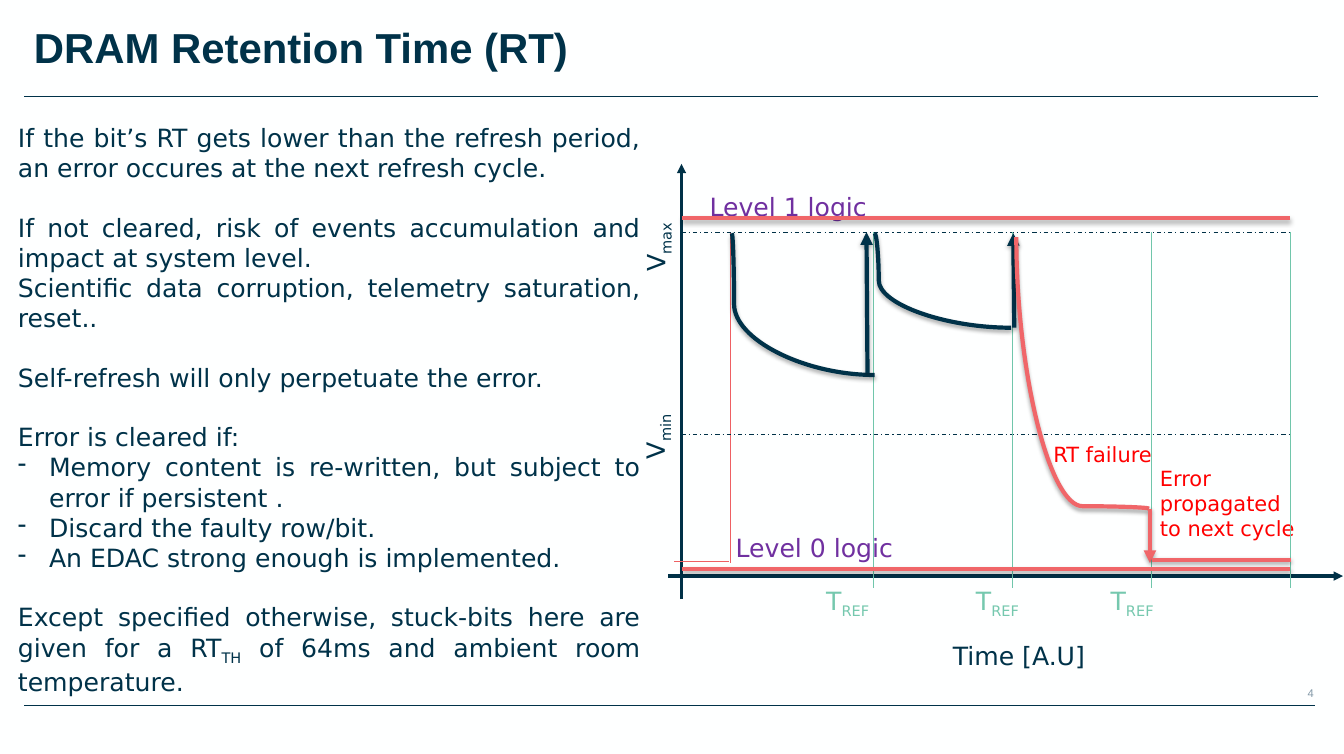
"""Build the slide on DRAM retention time with its voltage-over-time diagram."""

from dataclasses import dataclass

import lxml.etree
import pptx
import pptx.dml.color
import pptx.enum.dml
import pptx.enum.shapes
import pptx.enum.text
import pptx.oxml.ns
import pptx.shapes.connector
import pptx.slide
import pptx.text.text
import pptx.util

RGBColor = pptx.dml.color.RGBColor
Align = pptx.enum.text.PP_ALIGN
Connector = pptx.enum.shapes.MSO_CONNECTOR

CELL = pptx.util.Inches(0.1)
COLUMNS, ROWS = 133.7, 75

PAPER = RGBColor(0xFE, 0xFF, 0xFF)
NAVY = RGBColor(0x00, 0x32, 0x49)
AXIS_NAVY = RGBColor(0x00, 0x31, 0x47)
CORAL = RGBColor(0xF0, 0x66, 0x69)
START_RED = RGBColor(0xEE, 0x60, 0x63)
GREEN = RGBColor(0x70, 0xC6, 0xAB)
LABEL_GREEN = RGBColor(0x75, 0xC8, 0xAE)
PURPLE = RGBColor(0x70, 0x30, 0xA0)
RED = RGBColor(0xFF, 0x00, 0x00)
GREY = RGBColor(0x81, 0x97, 0xA6)

BODY_FONT = "DejaVu Sans"
BODY_SIZE = 18
BLANK_LINE = 21
V_MAX, V_MIN = 23.1, 43.2
AXIS_COLUMN, END_COLUMN = 67.8, 128.4
FIRST_REFRESH, REFRESH_PERIOD = 86.9, 13.83


@dataclass(frozen=True)
class Label:
    """Text box in grid cells; every second part between bars is a subscript."""

    text: str
    column: float
    row: float
    columns: float
    rows: float = 4
    color: RGBColor = NAVY
    size: float = BODY_SIZE
    font: str = BODY_FONT
    bold: bool = False
    wrap: bool = False
    rotation: float = 0
    align: Align = Align.LEFT
    right_inset: float = 1


@dataclass(frozen=True)
class Stroke:
    """Connector between two grid points; a bend makes it a curve."""

    start: tuple[float, float]
    end: tuple[float, float]
    color: RGBColor = AXIS_NAVY
    width: float = 0.75
    dashed: bool = False
    arrow: bool = False
    shadow: bool = False
    bend: float | None = None
    rotation: int = 0


@dataclass(frozen=True)
class BodyLine:
    """Paragraph of the explanation."""

    text: str
    gap: bool = False
    bullet: bool = False


BODY = (
    BodyLine("If the bit’s RT gets lower than the refresh period, an error occures at the next refresh cycle."),
    BodyLine("If not cleared, risk of events accumulation and impact at system level.", gap=True),
    BodyLine("Scientific data corruption, telemetry saturation, reset.."),
    BodyLine("Self-refresh will only perpetuate the error.", gap=True),
    BodyLine("Error is cleared if:", gap=True),
    BodyLine("Memory content is re-written, but subject to error if persistent .", bullet=True),
    BodyLine("Discard the faulty row/bit.", bullet=True),
    BodyLine("An EDAC strong enough is implemented.", bullet=True),
    BodyLine(
        "Except specified otherwise, stuck-bits here are given for a RT|TH| of 64ms and ambient room temperature.",
        gap=True,
    ),
)

LABELS = (
    Label("DRAM Retention Time (RT)", 2.4, 1.7, 110.6, 6.2, size=30, font="Arial", bold=True, wrap=True),
    Label("4", 89.7, 67.8, 41, 2.4, GREY, 8, "Arial", wrap=True, align=Align.RIGHT, right_inset=0),
    Label("Time [A.U]", 93.8, 63.2, 18.5, wrap=True),
    Label("V|min", 60.8, 40.3, 8.7, wrap=True, rotation=270),
    Label("V|max", 60.4, 21.2, 9.6, wrap=True, rotation=270),
    Label("Level 1 logic", 69.6, 18.5, 17.8, color=PURPLE),
    Label("Level 0 logic", 72.2, 52.5, 17.8, color=PURPLE),
    Label("RT failure", 103.8, 43.4, 12.1, 3.5, RED, 15),
    Label("Error\npropagated\nto next cycle", 114.4, 45.8, 15.5, 8.6, RED, 15),
    *(Label("T|REF", column, 57.7, 6.8, color=LABEL_GREEN) for column in (81.2, 96.1, 109.5)),
)

STROKES = (
    Stroke((2.4, 70.2), (130.8, 70.2), NAVY),
    Stroke((2.4, 9.6), (131.1, 9.6), NAVY),
    Stroke((AXIS_COLUMN, 59.6), (AXIS_COLUMN, 16.3), width=2.25, arrow=True),
    Stroke((66.5, 57.3), (133.6, 57.3), width=2.25, arrow=True),
    Stroke((67.1, 55.9), (72.5, 55.9), START_RED),
    Stroke((72.7, 23.2), (72.7, 56), START_RED),
    *(Stroke((AXIS_COLUMN, row), (END_COLUMN, row), dashed=True) for row in (V_MIN, V_MAX)),
    *(
        Stroke((column, V_MAX), (column, 58.5), GREEN)
        for column in (FIRST_REFRESH + REFRESH_PERIOD * cycle for cycle in range(4))
    ),
    Stroke((72.8, 23.2), (87, 37.3), NAVY, 3, shadow=True, bend=0.016),
    Stroke((87, 23.2), (100.6, 32.6), NAVY, 3, shadow=True, bend=0.031),
    Stroke((86.3, 37.1), (86.2, V_MAX), NAVY, 3, arrow=True, shadow=True),
    Stroke((100.9, 32.6), (100.8, 23.2), NAVY, 3, arrow=True, shadow=True),
    Stroke((121.2, 30.5), (94.2, 43.7), CORAL, 3, shadow=True, bend=0.991, rotation=270),
    Stroke((114.4, 50.6), (114.4, 56), CORAL, 3, arrow=True, shadow=True),
    Stroke((114.6, 55.7), (END_COLUMN, 55.7), CORAL, 3, shadow=True),
    *(Stroke((AXIS_COLUMN, row), (128.3, row), CORAL, 3, shadow=True) for row in (21.7, 56.6)),
)


def cells(count: float) -> pptx.util.Emu:
    """Convert grid cells to a length."""
    return pptx.util.Emu(round(count * CELL))


def add_child(parent: lxml.etree._Element, tag: str, **attributes: str) -> lxml.etree._Element:
    """Append a drawing element with the given attributes."""
    return lxml.etree.SubElement(parent, pptx.oxml.ns.qn(tag), attributes)


def write_text(paragraph: pptx.text.text._Paragraph, text: str, label: Label) -> None:
    """Fill a paragraph with text, subscripts and the label's font."""
    for index, part in enumerate(text.split("|")):
        run = paragraph.add_run()
        run.text = part
        if index % 2:
            run._r.get_or_add_rPr().set("baseline", "-25000")
    paragraph.alignment = label.align
    paragraph.font.name = label.font
    paragraph.font.size = pptx.util.Pt(label.size)
    paragraph.font.bold = label.bold
    paragraph.font.color.rgb = label.color


def add_frame(slide: pptx.slide.Slide, label: Label) -> pptx.text.text.TextFrame:
    """Add an empty text box for the label."""
    shape = slide.shapes.add_textbox(*map(cells, (label.column, label.row, label.columns, label.rows)))
    shape.rotation = label.rotation
    frame = shape.text_frame
    frame.word_wrap = label.wrap
    frame.auto_size = pptx.enum.text.MSO_AUTO_SIZE.SHAPE_TO_FIT_TEXT
    frame.margin_right = cells(label.right_inset)
    return frame


def add_label(slide: pptx.slide.Slide, label: Label) -> None:
    """Add a label with one paragraph per line."""
    frame = add_frame(slide, label)
    for index, line in enumerate(label.text.split("\n")):
        write_text(frame.add_paragraph() if index else frame.paragraphs[0], line, label)


def add_body(slide: pptx.slide.Slide) -> None:
    """Add the justified explanation on the left."""
    label = Label("", 0.8, 11.7, 63.9, 58.6, wrap=True, align=Align.JUSTIFY)
    frame = add_frame(slide, label)
    for index, line in enumerate(BODY):
        paragraph = frame.add_paragraph() if index else frame.paragraphs[0]
        if line.gap:
            paragraph.space_before = pptx.util.Pt(BLANK_LINE)
        if line.bullet:
            properties = paragraph._p.get_or_add_pPr()
            properties.set("marL", str(cells(3.1)))
            properties.set("indent", str(cells(-3.1)))
            add_child(properties, "a:buChar", char="-")
        write_text(paragraph, line.text, label)


def add_stroke(slide: pptx.slide.Slide, stroke: Stroke) -> None:
    """Add a straight or curved connector."""
    kind = Connector.STRAIGHT if stroke.bend is None else Connector.CURVE
    connector = slide.shapes.add_connector(kind, *map(cells, stroke.start + stroke.end))
    connector.line.color.rgb = stroke.color
    connector.line.width = pptx.util.Pt(stroke.width)
    if stroke.dashed:
        connector.line.dash_style = pptx.enum.dml.MSO_LINE.DASH_DOT
    properties = connector._element.spPr
    if stroke.arrow:
        add_child(connector.line._get_or_add_ln(), "a:tailEnd", type="triangle")
    if stroke.bend is not None:
        adjustments = properties.find(".//" + pptx.oxml.ns.qn("a:avLst"))
        add_child(adjustments, "a:gd", name="adj1", fmla=f"val {round(stroke.bend * 100000)}")
    if stroke.rotation:
        properties.find(pptx.oxml.ns.qn("a:xfrm")).set("rot", str(stroke.rotation * 60000))
    effects = add_child(properties, "a:effectLst")
    if stroke.shadow:
        shadow = add_child(effects, "a:outerShdw", blurRad="40000", dist="23000", dir="5400000", rotWithShape="0")
        add_child(add_child(shadow, "a:srgbClr", val="000000"), "a:alpha", val="35000")


def main() -> None:
    """Build and save the presentation."""
    presentation = pptx.Presentation()
    presentation.slide_width, presentation.slide_height = cells(COLUMNS), cells(ROWS)
    slide = presentation.slides.add_slide(presentation.slide_layouts[6])
    slide.background.fill.solid()
    slide.background.fill.fore_color.rgb = PAPER
    add_body(slide)
    for label in LABELS:
        add_label(slide, label)
    for stroke in STROKES:
        add_stroke(slide, stroke)
    presentation.save("out.pptx")


if __name__ == "__main__":
    main()
